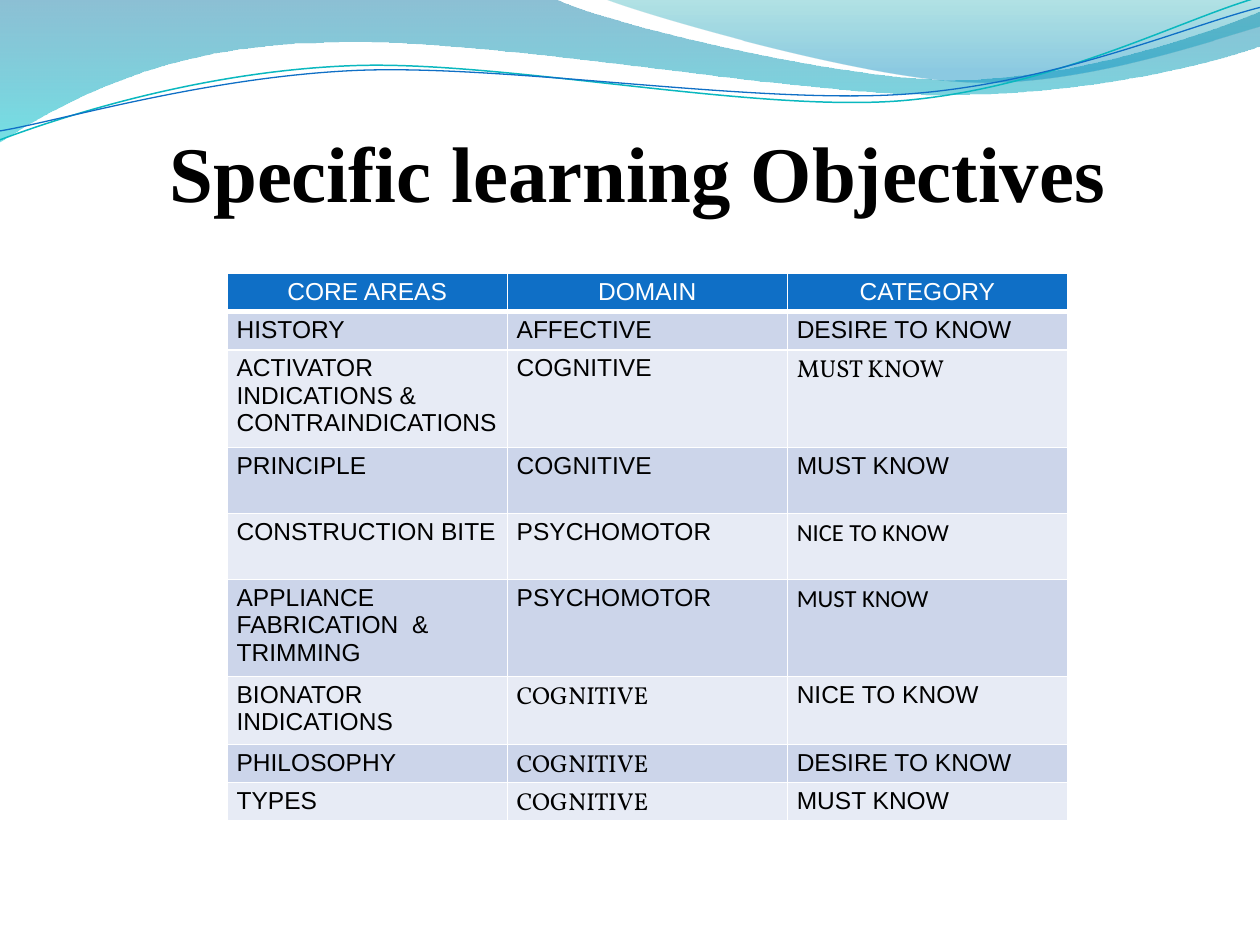
from lxml.etree import SubElement
from pptx import Presentation
from pptx.dml.color import RGBColor
from pptx.enum.text import MSO_ANCHOR, PP_ALIGN
from pptx.oxml.ns import qn
from pptx.util import Cm, Pt

BLACK = RGBColor(0x00, 0x00, 0x00)
WHITE = RGBColor(0xFF, 0xFF, 0xFF)
BLUE = RGBColor(0x0F, 0x6F, 0xC6)
TEAL = RGBColor(0x0A, 0xB8, 0xBF)
BAND_DARK = RGBColor(0xCC, 0xD5, 0xEA)
BAND_LIGHT = RGBColor(0xE7, 0xEB, 0xF5)
DEEP_BLUE = RGBColor(0x00, 0x74, 0xA1)
CYAN = RGBColor(0x00, 0xC6, 0xCF)
SEA_GREEN = RGBColor(0x00, 0xA1, 0xA9)
SKY_BLUE = RGBColor(0x00, 0x8B, 0xBF)

# Outlines in cm: a step of one point is straight, of three is a Bezier curve
BIG_WAVE = [
    [(0, -0.03)], [(11.18, -0.03)],
    [(12.09, 0.43), (16.87, 1.6), (19.25, 1.6)],
    [(21.67, 1.6), (24.33, 0.66), (25.4, 0.23)],
    [(25.43, 0.91)],
    [(24.97, 1.12), (22.1, 1.93), (18.95, 1.91)],
    [(15.8, 1.91), (9.7, 0.71), (6.53, 0.86)],
    [(3.28, 0.89), (1.17, 2.11), (-0.03, 2.87)],
    [(0, -0.03)],
]
SMALL_WAVE = [
    [(12.17, -0.03)],
    [(12.93, 0.28), (17.32, 1.57), (19.53, 1.65)],
    [(21.74, 1.75), (24.41, 0.81), (25.4, 0.53)],
    [(25.4, 0)], [(12.17, -0.03)],
]
TEAL_LINE = [
    [(-0.05, 2.22)],
    [(1.19, 1.82), (4.02, 1.04), (7.05, 1.06)],
    [(10.05, 1.07), (15.02, 2.37), (18.08, 2.29)],
    [(21.13, 2.2), (23.86, 0.91), (25.41, 0.55)],
]
BLUE_LINE = [
    [(-0.04, 2.04)],
    [(1.16, 1.9), (4.17, 1.15), (7.2, 1.16)],
    [(10.25, 1.18), (15.13, 2.22), (18.19, 2.16)],
    [(21.21, 2.1), (23.93, 1.06), (25.45, 0.75)],
]
LINE_ROTATION = -2.7

# Table content; a cell is its text, or (text, font) where not Arial
ROWS = [
    ("CORE AREAS", "DOMAIN", "CATEGORY"),
    ("HISTORY", "AFFECTIVE", "DESIRE TO KNOW"),
    ("ACTIVATOR INDICATIONS & CONTRAINDICATIONS", "COGNITIVE",
     ("MUST KNOW", "Vollkorn")),
    ("PRINCIPLE", "COGNITIVE", "MUST KNOW"),
    ("CONSTRUCTION BITE", "PSYCHOMOTOR", ("NICE TO KNOW", "Calibri")),
    ("APPLIANCE FABRICATION  & TRIMMING", "PSYCHOMOTOR",
     ("MUST KNOW", "Calibri")),
    ("BIONATOR INDICATIONS", ("COGNITIVE", "Vollkorn"), "NICE TO KNOW"),
    ("PHILOSOPHY", ("COGNITIVE", "Vollkorn"), "DESIRE TO KNOW"),
    ("TYPES", ("COGNITIVE", "Vollkorn"), "MUST KNOW"),
]
ROW_HEIGHTS = [0.76] * 3 + [1.33] * 3 + [0.76] * 3


def set_attrs(obj, values):
    for name, value in values.items():
        setattr(obj, name, value)


def add_run(p, text, color, values):
    r = p.add_run()
    r.text = text
    r.font.color.rgb = color
    set_attrs(r.font, values)


def add_outline(s, steps, close):
    (x, y), *rest = [(Cm(x), Cm(y)) for step in steps for x, y in step]
    builder = s.shapes.build_freeform(x, y)
    builder.add_line_segments(rest, close=close)
    sp = builder.convert_to_shape()
    sp.shadow.inherit = False
    # Join each three points of a curve into one Bezier segment
    segments = iter(list(sp._element.iter(qn("a:lnTo"))))
    for step in steps[1:]:
        group = [next(segments) for _ in step]
        if len(group) == 3:
            curve = group[0].makeelement(qn("a:cubicBezTo"), {})
            group[0].addprevious(curve)
            for segment in group:
                curve.append(segment[0])
                segment.getparent().remove(segment)
    return sp


def add_wave(s, steps, stops):
    sp = add_outline(s, steps, True)
    sp.line.fill.background()
    sp.fill.gradient()
    sp.fill.gradient_angle = 270
    for stop, (position, color, _) in zip(sp.fill.gradient_stops, stops):
        stop.position = position
        stop.color.rgb = color
    # Opacity of each gradient stop
    colors = sp._element.spPr.iter(qn("a:srgbClr"))
    for clr, (_, _, opacity) in zip(colors, stops):
        SubElement(clr, qn("a:alpha"), val=str(opacity * 1000))


def add_wave_line(s, steps, color, width):
    sp = add_outline(s, steps, False)
    sp.rotation = LINE_ROTATION
    sp.fill.background()
    sp.line.color.rgb = color
    sp.line.width = Pt(width)


def add_title(s, text):
    tf = s.shapes.add_textbox(Cm(3.4), Cm(2.12), Cm(19.3), Cm(2.29)).text_frame
    set_attrs(tf, {"word_wrap": True, "vertical_anchor": MSO_ANCHOR.BOTTOM,
                   "margin_left": 0, "margin_right": 0,
                   "margin_top": Cm(0.13), "margin_bottom": 0})
    p = tf.paragraphs[0]
    p.alignment = PP_ALIGN.CENTER
    add_run(p, text, BLACK,
            {"name": "Times New Roman", "size": Pt(45), "bold": True})


def set_borders(cell, color, widths):
    tcPr = cell._tc.get_or_add_tcPr()
    for index, (side, width) in enumerate(widths.items()):
        ln = tcPr.makeelement(qn(f"a:{side}"), {"w": str(Pt(width))})
        fill = SubElement(ln, qn("a:solidFill"))
        SubElement(fill, qn("a:srgbClr"), val=str(color))
        tcPr.insert(index, ln)


def fill_cell(cell, content, row):
    text, font = (content, "Arial") if isinstance(content, str) else content
    set_attrs(cell, {"margin_left": Cm(0.19), "margin_right": Cm(0.19),
                     "margin_top": Cm(0.09), "margin_bottom": Cm(0.09)})
    cell.fill.solid()
    if row == 0:
        background, color, align = BLUE, WHITE, PP_ALIGN.CENTER
    else:
        background = BAND_DARK if row % 2 else BAND_LIGHT
        color, align = BLACK, PP_ALIGN.LEFT
    cell.fill.fore_color.rgb = background
    set_borders(cell, WHITE, {"lnL": 1, "lnR": 1, "lnT": 1,
                              "lnB": 1 if row else 3})
    p = cell.text_frame.paragraphs[0]
    p.alignment = align
    add_run(p, text, color, {"name": font, "size": Pt(14), "bold": False})


def add_objectives_table(s):
    frame = s.shapes.add_table(len(ROWS), len(ROWS[0]), Cm(4.58), Cm(5.51),
                               Cm(16.94), Cm(11.13))
    table = frame.table
    for i, (contents, height) in enumerate(zip(ROWS, ROW_HEIGHTS)):
        table.rows[i].height = Cm(height)
        for j, content in enumerate(contents):
            fill_cell(table.cell(i, j), content, i)
    # Rows grow with their text inside the full frame
    frame.height = Cm(11.13)


def main():
    prs = Presentation()
    prs.slide_width, prs.slide_height = Cm(25.4), Cm(19.05)
    s = prs.slides.add_slide(prs.slide_layouts[6])

    # Wave decoration along the top
    add_wave(s, BIG_WAVE, [(0, DEEP_BLUE, 45), (1, CYAN, 55)])
    add_wave(s, SMALL_WAVE, [(0, SEA_GREEN, 30), (0.8, SKY_BLUE, 45)])
    add_wave_line(s, TEAL_LINE, TEAL, 0.85)
    add_wave_line(s, BLUE_LINE, BLUE, 0.75)

    # Title and table
    add_title(s, "Specific learning Objectives ")
    add_objectives_table(s)

    prs.save("out.pptx")


if __name__ == "__main__":
    main()
